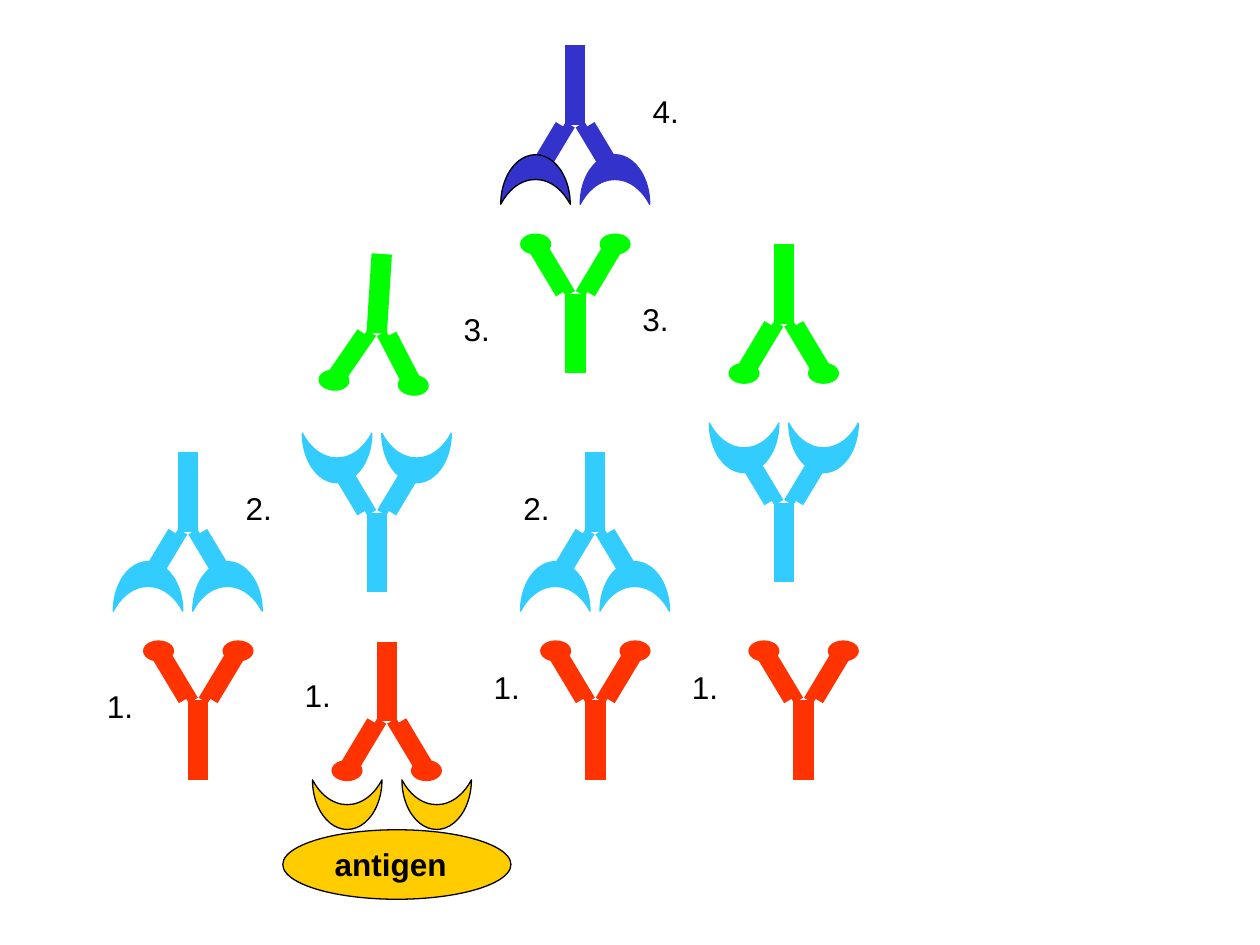
from math import cos, radians, sin

from lxml.etree import SubElement
from pptx import Presentation
from pptx.dml.color import RGBColor
from pptx.enum.shapes import MSO_CONNECTOR as Connector, MSO_SHAPE as Preset
from pptx.oxml.ns import qn
from pptx.util import Pt

RED, SKY, GREEN, NAVY = "FF3300", "33CCFF", "00FF00", "3333CC"
GOLD, BLACK = "FFCC00", "000000"
MOON = (Preset.MOON, 28.35, 39.7)
KNOB = (Preset.OVAL, 17, 11.34)
TIP_X, KNOB_Y, MOON_Y = 22.7, 28.35, 31.3

ARMS = [
    ((-2.83, -45.35), (-2.83, 0)),
    ((2.83, -45.35), (2.83, 0)),
    ((2.83, 0), (19.84, 28.35)),
    ((-2.83, 0), (-19.84, 28.35)),
    ((-8.5, 0), (-25.5, 28.35)),
    ((8.5, 0), (25.5, 28.35)),
]

ANTIBODIES = [
    (221, 412, 0, RED, KNOB),
    (340.2, 400.3, 180, RED, KNOB),
    (328.7, 71.3, 0, NAVY, MOON),
    (447.9, 287.2, 180, SKY, MOON),
    (459.2, 400.3, 180, RED, KNOB),
    (113.3, 400.3, 180, RED, KNOB),
    (107.3, 303.8, 0, SKY, MOON),
    (215.3, 293, 180, SKY, MOON),
    (215.3, 190.4, 3.6, GREEN, KNOB),
    (447.9, 185, 0, GREEN, KNOB),
    (328.8, 167.8, 180, GREEN, KNOB),
    (340, 303.8, 0, SKY, MOON),
]

LABELS = [
    ("1.", 167, 383, 39.7),
    ("2.", 292, 275.8, 73.4),
    ("1.", 275, 378, 39.7),
    ("1.", 388.3, 378, 39.7),
    ("1.", 54, 389, 39.7),
    ("2.", 133.2, 275.8, 73.4),
    ("3.", 257.8, 173.5, 39.7),
    ("3.", 360, 167.8, 45.4),
    ("4.", 365.8, 49, 79.2),
]


def colour(value):
    return RGBColor.from_string(value)


def add_shape(shapes, kind, x, y, fill, line, angle=0):
    preset, width, height = kind
    shape = shapes.add_shape(preset, Pt(x - width / 2), Pt(y - height / 2), Pt(width), Pt(height))
    shape.shadow.inherit = False
    shape.rotation = angle
    shape.fill.solid()
    shape.fill.fore_color.rgb = colour(fill)
    shape.line.color.rgb = colour(line)
    shape.line.width = Pt(0.75)


def add_line(shapes, start, end, line):
    connector = shapes.add_connector(Connector.STRAIGHT, *(Pt(value) for value in start + end))
    connector.line.color.rgb = colour(line)
    connector.line.width = Pt(6)
    SubElement(connector.element.spPr, qn("a:effectLst"))


def add_text(page, text, left, top, width, bold=False):
    box = page.shapes.add_textbox(Pt(left), Pt(top), Pt(width), Pt(28.8))
    box.text_frame.word_wrap = True
    span = box.text_frame.paragraphs[0].add_run()
    span.text = text
    span.font.name = "Arial"
    span.font.size = Pt(18)
    span.font.bold = bold
    span.font.color.rgb = colour(BLACK)


def add_antibody(page, x, y, angle, fill, tip):
    shapes = page.shapes.add_group_shape().shapes
    cosine, sine = cos(radians(angle)), sin(radians(angle))

    def place(point):
        across, down = point
        return x + across * cosine - down * sine, y + across * sine + down * cosine

    for start, end in ARMS:
        add_line(shapes, place(start), place(end), fill)
    is_moon = tip == MOON
    for side in (1, -1):
        centre = place((side * TIP_X, MOON_Y if is_moon else KNOB_Y))
        outline = BLACK if fill == NAVY and side == -1 else fill
        add_shape(shapes, tip, *centre, fill, outline, angle + 90 if is_moon else angle)


deck = Presentation()
deck.slide_width, deck.slide_height = Pt(720), Pt(540)
page = deck.slides.add_slide(deck.slide_layouts[6])

for antibody in ANTIBODIES:
    add_antibody(page, *antibody)
for x in (198.4, 249.5):
    add_shape(page.shapes, MOON, x, 459.8, GOLD, BLACK, 270)
add_shape(page.shapes, (Preset.OVAL, 130.4, 39.7), 226.8, 494, GOLD, BLACK)
for label in LABELS:
    add_text(page, *label)
add_text(page, "antigen", 184.2, 479.5, 79.2, bold=True)

deck.save("out.pptx")
